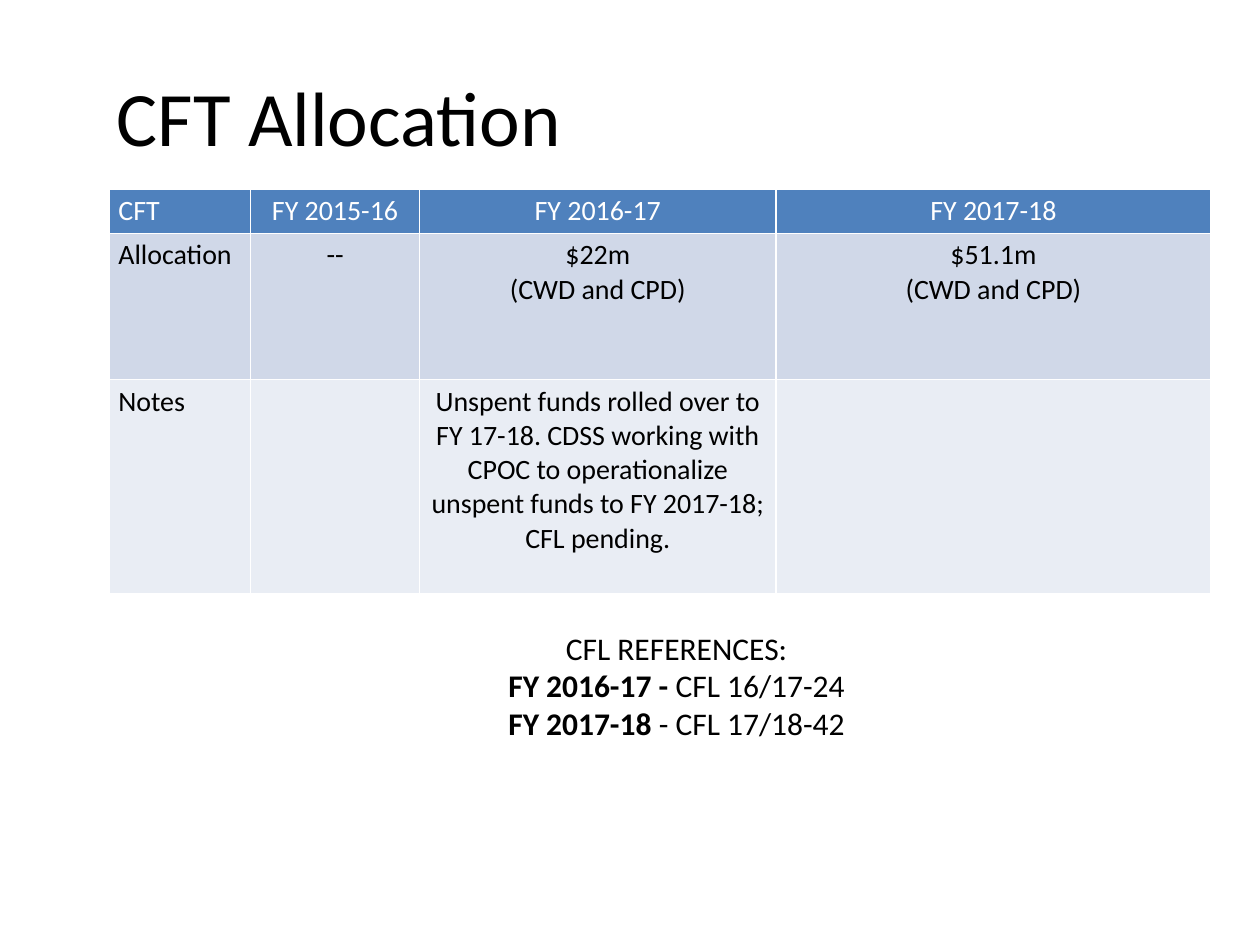
"""Build the CFT allocation slide."""
from dataclasses import dataclass
from typing import NamedTuple

from lxml.etree import SubElement as Sub
from pptx import Presentation
from pptx.dml.color import RGBColor as Rgb
from pptx.enum.text import MSO_ANCHOR as Anchor, PP_ALIGN as Align
from pptx.oxml.ns import qn
from pptx.util import Inches, Pt


@dataclass(frozen=True)
class Theme:
    font: str = "Calibri"
    ink: str = "000000"
    white: str = "FFFFFF"
    head: str = "4F81BD"
    bands: tuple = ("D0D8E8", "E9EDF4")
    title: int = 44
    body: int = 18
    cell: int = 16
    edge: int = 1


class Run(NamedTuple):
    text: str
    bold: bool = False


class Box(NamedTuple):
    left: float
    top: float
    width: float
    height: float
    size: int
    align: Align
    anchor: Anchor
    lines: list


class Row(NamedTuple):
    height: float
    fill: str
    ink: str
    cells: list


THEME = Theme()
WIDTHS = [1.12, 1.34, 2.83, 3.45]
ROWS = [
    Row(0.34, THEME.head, THEME.white,
        ["CFT", "FY 2015-16", "FY 2016-17", "FY 2017-18"]),
    Row(1.16, THEME.bands[0], THEME.ink,
        ["Allocation", "--", "$22m\n(CWD and CPD)", "$51.1m\n(CWD and CPD)"]),
    Row(1.7, THEME.bands[1], THEME.ink,
        ["Notes", "",
         "Unspent funds rolled over to FY 17-18. CDSS working with CPOC to "
         "operationalize unspent funds to FY 2017-18; CFL pending.", ""]),
]
BOXES = [
    Box(0.83, 0.29, 8.83, 1.25, THEME.title, Align.LEFT, Anchor.MIDDLE,
        [[Run("CFT Allocation")]]),
    Box(2.83, 4.94, 5.08, 1.01, THEME.body, Align.CENTER, Anchor.TOP,
        [[Run("CFL REFERENCES:")],
         [Run("FY 2016-17 - ", True), Run("CFL 16/17-24")],
         [Run("FY 2017-18 ", True), Run("- CFL 17/18-42")]]),
]


def style(para, size: int, ink: str, align: Align) -> None:
    para.alignment = align
    para.font.name = THEME.font
    para.font.size = Pt(size)
    para.font.color.rgb = Rgb.from_string(ink)


def draw_box(slide, box: Box) -> None:
    place = [Inches(n) for n in box[:4]]
    frame = slide.shapes.add_textbox(*place).text_frame
    frame.word_wrap = True
    frame.vertical_anchor = box.anchor
    for i, line in enumerate(box.lines):
        para = frame.add_paragraph() if i else frame.paragraphs[0]
        style(para, box.size, THEME.ink, box.align)
        for part in line:
            run = para.add_run()
            run.text = part.text
            if part.bold:
                run.font.bold = True


def draw_edges(cell) -> None:
    props = cell._tc.get_or_add_tcPr()
    for side in ("lnL", "lnR", "lnT", "lnB"):
        line = Sub(props, qn(f"a:{side}"), w=str(Pt(THEME.edge)))
        fill = Sub(line, qn("a:solidFill"))
        Sub(fill, qn("a:srgbClr"), val=THEME.white)


def draw_cell(cell, text: str, row: Row, align: Align) -> None:
    cell.margin_left = cell.margin_right = Inches(0.07)
    cell.margin_top = cell.margin_bottom = Inches(0.04)
    draw_edges(cell)
    cell.fill.solid()
    cell.fill.fore_color.rgb = Rgb.from_string(row.fill)
    cell.text = text
    for para in cell.text_frame.paragraphs:
        style(para, THEME.cell, row.ink, align)
        para.font.bold = False


def draw_table(slide, left: float, top: float) -> None:
    width = Inches(sum(WIDTHS))
    height = Inches(sum(row.height for row in ROWS))
    table = slide.shapes.add_table(
        len(ROWS), len(WIDTHS), Inches(left), Inches(top), width, height).table
    for col, wide in zip(table.columns, WIDTHS):
        col.width = Inches(wide)
    for r, row in enumerate(ROWS):
        table.rows[r].height = Inches(row.height)
        for c, text in enumerate(row.cells):
            align = Align.CENTER if c else Align.LEFT
            draw_cell(table.cell(r, c), text, row, align)


def main() -> None:
    deck = Presentation()
    deck.slide_width, deck.slide_height = Inches(10), Inches(7.5)
    slide = deck.slides.add_slide(deck.slide_layouts[6])
    draw_table(slide, 0.87, 1.5)
    for box in BOXES:
        draw_box(slide, box)
    deck.save("out.pptx")


if __name__ == "__main__":
    main()
